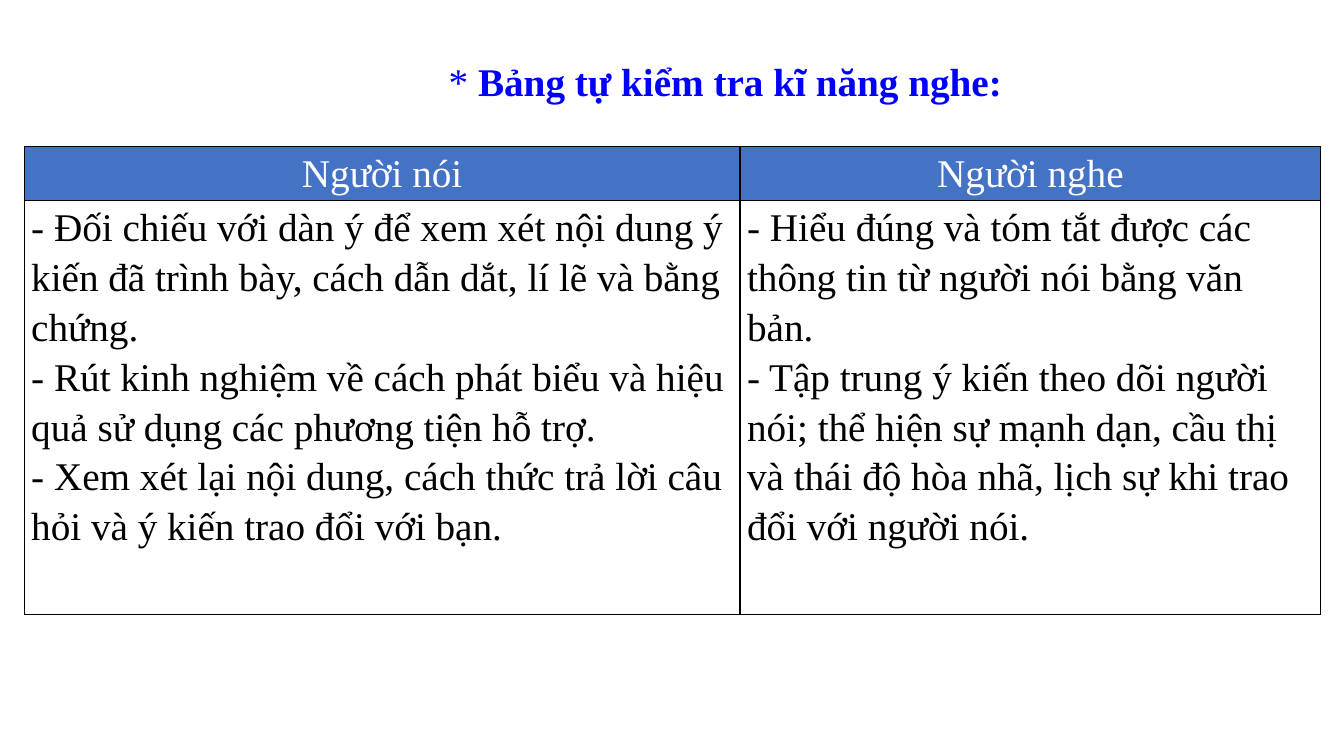
from lxml import etree
from pptx import Presentation
from pptx.dml.color import RGBColor
from pptx.enum.text import MSO_ANCHOR, MSO_AUTO_SIZE, PP_ALIGN
from pptx.oxml.ns import qn
from pptx.util import Inches, Pt

LEFT, CENTER = PP_ALIGN.LEFT, PP_ALIGN.CENTER
TOP = MSO_ANCHOR.TOP
GROW = MSO_AUTO_SIZE.SHAPE_TO_FIT_TEXT
TITLE_ONLY = 5

BLUE, HEADER_BLUE, WHITE, BLACK = "0000FF", "4472C4", "FFFFFF", "000000"

CHECKLIST = {
    "Người nói": [
        "- Đối chiếu với dàn ý để xem xét nội dung ý kiến đã trình bày, cách dẫn dắt, lí lẽ và bằng chứng.",
        "- Rút kinh nghiệm về cách phát biểu và hiệu quả sử dụng các phương tiện hỗ trợ.",
        "- Xem xét lại nội dung, cách thức trả lời câu hỏi và ý kiến trao đổi với bạn.",
    ],
    "Người nghe": [
        "- Hiểu đúng và tóm tắt được các thông tin từ người nói bằng văn bản.",
        "- Tập trung ý kiến theo dõi người nói; thể hiện sự mạnh dạn, cầu thị và thái độ hòa nhã, "
        "lịch sự khi trao đổi với người nói.",
    ],
}


def rgb(hex_color):
    return RGBColor.from_string(hex_color)


class SlideBuilder:
    font = "Times New Roman"
    size = Pt(28)
    line_spacing = 1.15

    def __init__(self, slide):
        self.slide = slide

    def add_text(self, frame, paragraphs, color, align=LEFT):
        """Fill a text frame; each paragraph is a list of (text, bold) runs."""
        for index, runs in enumerate(paragraphs):
            paragraph = frame.paragraphs[0] if index == 0 else frame.add_paragraph()
            paragraph.alignment = align
            paragraph.line_spacing = self.line_spacing
            for text, bold in runs:
                run = paragraph.add_run()
                run.text = text
                run.font.name = self.font
                run.font.size = self.size
                run.font.bold = bold
                run.font.color.rgb = rgb(color)

    def title(self, runs, left, top, width, height):
        heading = self.slide.shapes.title
        heading.left, heading.top = Inches(left), Inches(top)
        heading.width, heading.height = Inches(width), Inches(height)
        frame = heading.text_frame
        frame.word_wrap = True
        frame.auto_size = GROW
        frame.vertical_anchor = TOP
        self.add_text(frame, [runs], BLUE)

    def border(self, cell):
        properties = cell._tc.get_or_add_tcPr()
        for side in ("lnL", "lnR", "lnT", "lnB"):
            line = etree.SubElement(properties, qn(f"a:{side}"), w=str(Pt(1)))
            fill = etree.SubElement(line, qn("a:solidFill"))
            etree.SubElement(fill, qn("a:srgbClr"), val=BLACK)

    def cell(self, cell, texts, is_header):
        cell.margin_left = cell.margin_right = Inches(0.07)
        cell.margin_top = cell.margin_bottom = 0
        self.border(cell)
        if is_header:
            cell.fill.solid()
            cell.fill.fore_color.rgb = rgb(HEADER_BLUE)
        else:
            cell.fill.background()
        self.add_text(cell.text_frame, [[(text, False)] for text in texts],
                      WHITE if is_header else BLACK, CENTER if is_header else LEFT)

    def table(self, columns, left, top, widths, heights):
        """Draw a table from a mapping of column heading to body paragraphs."""
        grid = self.slide.shapes.add_table(
            len(heights), len(widths), Inches(left), Inches(top),
            Inches(sum(widths)), Inches(sum(heights))).table
        for row, height in zip(grid.rows, heights):
            row.height = Inches(height)
        for index, (heading, points) in enumerate(columns.items()):
            grid.columns[index].width = Inches(widths[index])
            self.cell(grid.cell(0, index), [heading], True)
            self.cell(grid.cell(1, index), points, False)


def main():
    deck = Presentation()
    deck.slide_width, deck.slide_height = Inches(13.33), Inches(7.5)
    builder = SlideBuilder(deck.slides.add_slide(deck.slide_layouts[TITLE_ONLY]))
    builder.table(CHECKLIST, 0.24, 1.45, widths=[7.1, 5.76], heights=[0.49, 4.11])
    builder.title([("* ", False), ("Bảng tự kiểm tra kĩ năng nghe:", True)],
                  4.35, 0.45, 6.67, 0.6)
    deck.save("out.pptx")


if __name__ == "__main__":
    main()
